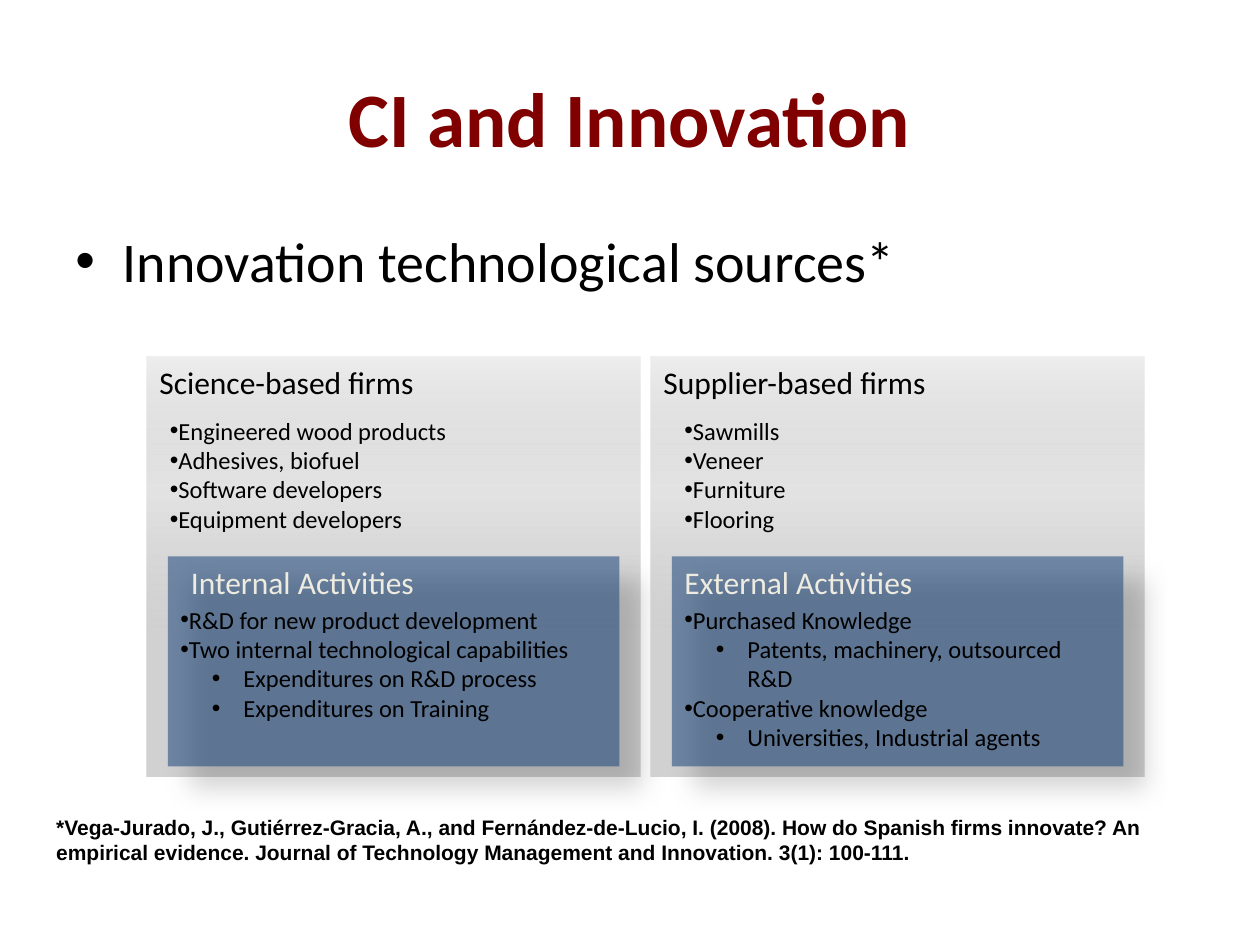
from lxml import etree
from pptx import Presentation
from pptx.dml.color import RGBColor
from pptx.enum.shapes import MSO_SHAPE
from pptx.enum.text import MSO_ANCHOR, PP_ALIGN
from pptx.oxml import parse_xml
from pptx.oxml.ns import qn
from pptx.util import Pt

RECT = MSO_SHAPE.RECTANGLE
MIDDLE = MSO_ANCHOR.MIDDLE
CENTER = PP_ALIGN.CENTER
NS = 'xmlns:a="http://schemas.openxmlformats.org/drawingml/2006/main"'

PANEL_FILL = f"""<a:gradFill {NS} rotWithShape="1"><a:gsLst>
<a:gs pos="35000"><a:srgbClr val="D1D1D1"/></a:gs>
<a:gs pos="68000"><a:srgbClr val="BDBDBD"><a:alpha val="41000"/></a:srgbClr></a:gs>
<a:gs pos="100000"><a:srgbClr val="EEEEEE"/></a:gs>
</a:gsLst><a:lin ang="16200000" scaled="1"/></a:gradFill>"""
BOX_SHADOW = f"""<a:effectLst {NS}>
<a:outerShdw blurRad="190500" dist="228600" dir="2700000" algn="tl" rotWithShape="0">
<a:srgbClr val="000000"><a:alpha val="30000"/></a:srgbClr></a:outerShdw></a:effectLst>"""


def add_run(p, text, size, color="000000", font="Calibri", bold=False):
    r = p.add_run()
    r.text = text
    r.font.size = Pt(size)
    r.font.name = font
    r.font.bold = bold
    r.font.color.rgb = RGBColor.from_string(color)


def add_text(box, lines, size, color="000000", font="Calibri", bold=False, wrap=True):
    """Add a text box; each line is (text, None or (margin, indent) of its bullet)."""
    tf = s.shapes.add_textbox(*[Pt(v) for v in box]).text_frame
    tf.word_wrap = wrap
    for i, (text, bullet) in enumerate(lines):
        p = tf.add_paragraph() if i else tf.paragraphs[0]
        if bullet:
            pPr = p._p.get_or_add_pPr()
            pPr.set("marL", str(Pt(bullet[0])))
            pPr.set("indent", str(Pt(bullet[1])))
            etree.SubElement(pPr, qn("a:buFont")).set("typeface", "Arial")
            etree.SubElement(pPr, qn("a:buChar")).set("char", "•")
        add_run(p, text, size, color, font, bold)


prs = Presentation()
prs.slide_width, prs.slide_height = Pt(720), Pt(540)
s = prs.slides.add_slide(prs.slide_layouts[5])

title = s.shapes.title
title.left, title.top, title.width, title.height = Pt(36), Pt(21.6), Pt(648), Pt(90)
title.text_frame.vertical_anchor = MIDDLE
p = title.text_frame.paragraphs[0]
p.alignment = CENTER
add_run(p, "CI and Innovation", 44, "800000", bold=True)

add_text((36, 126, 648, 60), [("Innovation technological sources*", (27, -27))], 32)

TOP, SUB = (0, 0), (36, -18)
# panel left, heading, list left, firms, activity heading, its left, activities
columns = [
    (84, "Science-based firms", 90,
     ["Engineered wood products", "Adhesives, biofuel", "Software developers",
      "Equipment developers"],
     "Internal Activities", 102,
     [("R&D for new product development", TOP),
      ("Two internal technological capabilities", TOP),
      ("Expenditures on R&D process", SUB),
      ("Expenditures on Training", SUB)]),
    (372, "Supplier-based firms", 384,
     ["Sawmills", "Veneer", "Furniture", "Flooring"],
     "External Activities", 384,
     [("Purchased Knowledge", TOP),
      ("Patents, machinery, outsourced R&D", SUB),
      ("Cooperative knowledge", TOP),
      ("Universities, Industrial agents", SUB)]),
]

for x, heading, firms_x, firms, activity, activity_x, activities in columns:
    panel = s.shapes.add_shape(RECT, Pt(x), Pt(204), Pt(282), Pt(240))
    panel.shadow.inherit = False
    panel.line.fill.background()
    panel.fill.background()
    no_fill = panel._element.spPr.find(qn("a:noFill"))
    no_fill.getparent().replace(no_fill, parse_xml(PANEL_FILL))
    add_text((x, 204, 166, 29), [(heading, None)], 18, wrap=False)
    add_text((firms_x, 234, 258, 75), [(firm, TOP) for firm in firms], 14)

    box = s.shapes.add_shape(RECT, Pt(x + 12), Pt(318), Pt(258), Pt(120))
    box.line.fill.background()
    box.fill.solid()
    box.fill.fore_color.rgb = RGBColor.from_string("1F497D")
    color = box._element.spPr.find(qn("a:solidFill"))[0]
    etree.SubElement(color, qn("a:alpha")).set("val", "56000")
    box._element.spPr.append(parse_xml(BOX_SHADOW))
    add_text((activity_x, 318, 146, 29), [(activity, None)], 18, "EEECE1", wrap=False)
    add_text((x + 12, 342, 258, 92), activities, 14)

citation = ("*Vega-Jurado, J., Gutiérrez-Gracia, A., and Fernández-de-Lucio, I. (2008). "
            "How do Spanish firms innovate? An empirical evidence. Journal of Technology "
            "Management and Innovation. 3(1): 100-111.")
add_text((25, 462, 683, 36), [(citation, None)], 12, font="Arial", bold=True)

prs.save("out.pptx")
